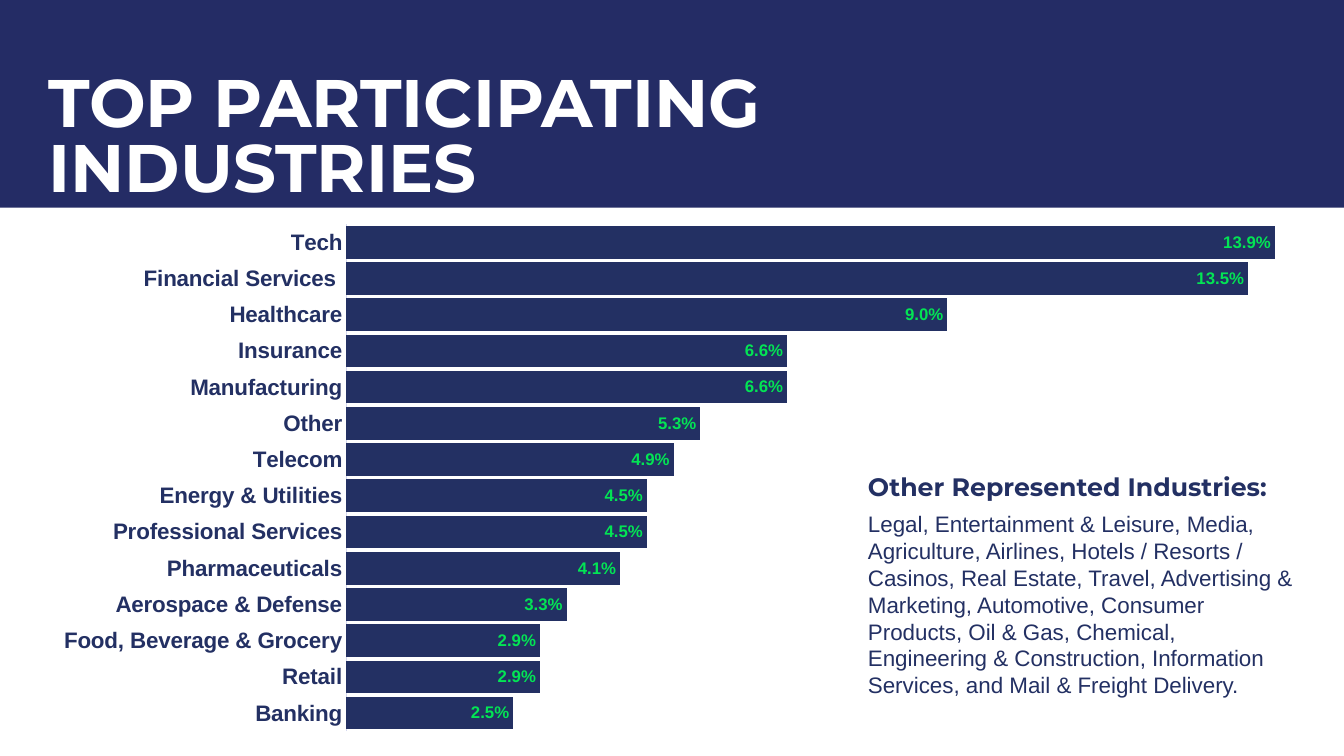
import pptx
import pptx.chart.data
import pptx.dml.color
import pptx.enum.chart
import pptx.enum.shapes
import pptx.enum.text
import pptx.oxml
import pptx.util

WIDTH, HEIGHT = 13.33, 7.5
MARGIN = 0.38
BANNER = 2.06
NAVY, INK, GREEN, RULE, WHITE = "242C65", "233063", "03E454", "D6D9F0", "FFFFFF"

TITLE = "TOP PARTICIPATING INDUSTRIES"
SHARES = {
    "Tech": 0.139,
    "Financial Services ": 0.135,
    "Healthcare": 0.09,
    "Insurance": 0.066,
    "Manufacturing": 0.066,
    "Other": 0.053,
    "Telecom": 0.049,
    "Energy & Utilities": 0.045,
    "Professional Services": 0.045,
    "Pharmaceuticals": 0.041,
    "Aerospace & Defense": 0.033,
    "Food, Beverage & Grocery": 0.029,
    "Retail": 0.029,
    "Banking": 0.025,
}
OTHERS_HEADING = "Other Represented Industries:"
OTHERS = (
    "Legal, Entertainment & Leisure, Media, Agriculture, Airlines, "
    "Hotels / Resorts / Casinos, Real Estate, Travel, Advertising & Marketing, "
    "Automotive, Consumer Products, Oil & Gas, Chemical, Engineering & Construction, "
    "Information Services, and Mail & Freight Delivery."
)
PLOT = {"x": 0.243, "y": 0.02, "w": 0.738, "h": 0.96}


def color(code):
    """Turn a hex string into a colour."""
    return pptx.dml.color.RGBColor.from_string(code)


def inches(*lengths):
    """Turn lengths in inches into slide units."""
    return [pptx.util.Inches(length) for length in lengths]


def assign(target, values):
    """Set each named attribute of the target."""
    for name, value in values.items():
        setattr(target, name, value)


def style(font, face, size, code, bold):
    """Format a font."""
    assign(font, {"name": face, "size": pptx.util.Pt(size), "bold": bold})
    font.color.rgb = color(code)


def add_banner(page):
    """Draw the band behind the title."""
    banner = page.shapes.add_shape(
        pptx.enum.shapes.MSO_SHAPE.RECTANGLE, *inches(0, 0, WIDTH, BANNER))
    banner.shadow.inherit = False
    banner.fill.solid()
    banner.fill.fore_color.rgb = color(NAVY)
    banner.line.fill.background()


def add_text(page, place, anchor, rows, layout):
    """Add a wrapped text box with one paragraph for each row."""
    frame = page.shapes.add_textbox(*inches(*place)).text_frame
    assign(frame, {"word_wrap": True, "vertical_anchor": anchor})
    for index, (words, *look) in enumerate(rows):
        para = frame.add_paragraph() if index else frame.paragraphs[0]
        assign(para, layout)
        span = para.add_run()
        span.text = words
        style(span.font, *look)


def fix_plot(chart):
    """Pin the inner plot area to its shares of the chart."""
    area = chart.plots[0]._element.getparent()
    for old in area.findall(pptx.oxml.ns.qn("c:layout")):
        area.remove(old)
    modes = '<c:layoutTarget val="inner"/><c:xMode val="edge"/><c:yMode val="edge"/>'
    shares = "".join(f'<c:{name} val="{share}"/>' for name, share in PLOT.items())
    area.insert(0, pptx.oxml.parse_xml(
        f'<c:layout {pptx.oxml.ns.nsdecls("c")}><c:manualLayout>'
        f"{modes}{shares}</c:manualLayout></c:layout>"))


def add_bars(page):
    """Add the bar chart of industry shares, largest on top."""
    kinds = pptx.enum.chart
    data = pptx.chart.data.CategoryChartData(number_format="0.0%")
    data.categories = list(reversed(SHARES))
    data.add_series("Series 1", list(reversed(SHARES.values())))
    place = inches(MARGIN, 2.12, WIDTH - 2 * MARGIN, 5.24)
    chart = page.shapes.add_chart(
        kinds.XL_CHART_TYPE.BAR_CLUSTERED, *place, data).chart
    assign(chart, {"has_legend": False, "has_title": False})
    style(chart.font, "Arial", 10, NAVY, False)

    names, scale = chart.category_axis, chart.value_axis
    assign(names, {"major_tick_mark": kinds.XL_TICK_MARK.NONE,
                   "has_major_gridlines": False})
    style(names.tick_labels.font, "Arial", 16, INK, True)
    names.format.line.color.rgb = color(RULE)
    names.format.line.width = pptx.util.Pt(0.75)
    assign(scale, {"minimum_scale": 0, "maximum_scale": 0.14,
                   "has_major_gridlines": False, "visible": False})

    plot = chart.plots[0]
    assign(plot, {"gap_width": 11, "vary_by_categories": False,
                  "has_data_labels": True})
    bars = plot.series[0].format.fill
    bars.solid()
    bars.fore_color.rgb = color(INK)
    labels = plot.data_labels
    assign(labels, {"show_value": True, "number_format": "0.0%",
                    "number_format_is_linked": False,
                    "position": kinds.XL_LABEL_POSITION.INSIDE_END})
    style(labels.font, "Arial", 12, GREEN, True)
    fix_plot(chart)


def main():
    """Build the slide and save it."""
    deck = pptx.Presentation()
    deck.slide_width, deck.slide_height = inches(WIDTH, HEIGHT)
    page = deck.slides.add_slide(deck.slide_layouts[6])
    anchors = pptx.enum.text.MSO_ANCHOR
    add_banner(page)
    add_text(page, (MARGIN, 0.67, 8.13, 1.45), anchors.MIDDLE,
             [(TITLE, "Montserrat", 48, WHITE, True)], {"line_spacing": 0.8})
    add_bars(page)
    add_text(page, (8.51, 4.63, 4.42, 2.6), anchors.TOP,
             [(OTHERS_HEADING, "Montserrat", 18, INK, True),
              (OTHERS, "Arial", 16, INK, False)],
             {"space_after": pptx.util.Pt(6)})
    deck.save("out.pptx")


if __name__ == "__main__":
    main()
